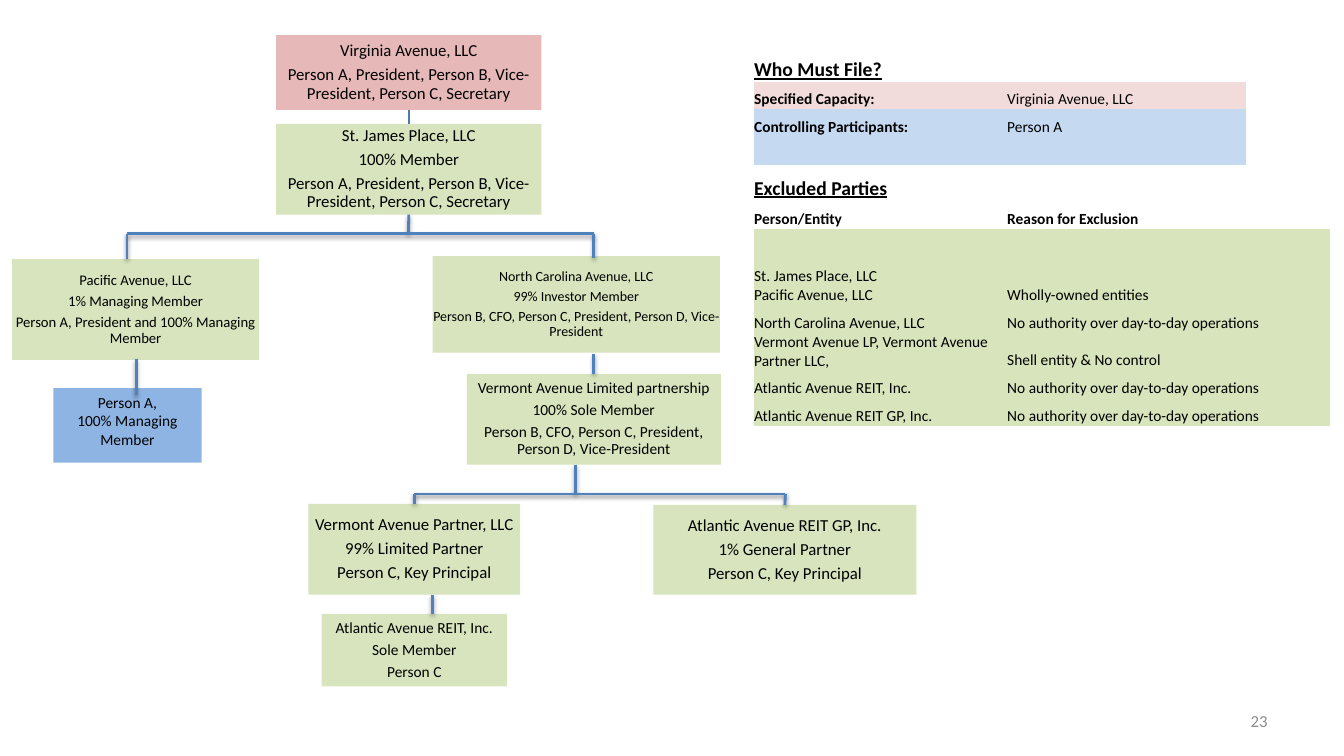
from lxml import etree
from pptx import Presentation
from pptx.dml.color import RGBColor
from pptx.enum.shapes import MSO_CONNECTOR, MSO_SHAPE
from pptx.enum.text import MSO_ANCHOR, PP_ALIGN
from pptx.oxml.ns import qn
from pptx.util import Pt

RECT, STRAIGHT = MSO_SHAPE.RECTANGLE, MSO_CONNECTOR.STRAIGHT
LEFT, CENTER, RIGHT = PP_ALIGN.LEFT, PP_ALIGN.CENTER, PP_ALIGN.RIGHT
TOP, MIDDLE, BOTTOM = MSO_ANCHOR.TOP, MSO_ANCHOR.MIDDLE, MSO_ANCHOR.BOTTOM
BOTTOM_SIDE, TOP_SIDE = 2, 0
PX = 9144  # 100 px to the inch
NO_STYLE = "{2D5ABB26-0587-4C30-8999-92F81FD0307C}"

THEME = {
    "font": "Calibri", "text": "000000", "muted": "8C8C8C",
    "capacity": "E6B9B8", "entity": "D7E4BD", "controller": "8EB4E3",
    "capacity_row": "F2DCDB", "controller_row": "C5D9F1", "excluded_row": "D8E4BC",
    "link": "4F81BD", "thin_link": "497CAB",
    "heading": 14, "large": 12, "body": 11, "small": 10.5, "tiny": 10,
}


def write(frame, lines, size, color="text", align=LEFT, bold=False,
          underline=False, spacing=None, after=0):
    """Fill a text frame, one paragraph for each line."""
    frame.word_wrap = True
    for index, line in enumerate(lines):
        paragraph = frame.paragraphs[0] if index == 0 else frame.add_paragraph()
        paragraph.alignment = align
        if spacing:
            paragraph.line_spacing = spacing
            paragraph.space_after = Pt(after)
        if not line:
            etree.SubElement(paragraph._p, qn("a:endParaRPr"), sz=str(THEME[size] * 100))
            continue
        run = paragraph.add_run()
        run.text = line
        run.font.name = THEME["font"]
        run.font.size = Pt(THEME[size])
        run.font.bold = bold
        run.font.underline = underline
        run.font.color.rgb = RGBColor.from_string(THEME[color])


def link(start, end, color="link", width=2, shadow=True):
    connector = slide.shapes.add_connector(STRAIGHT, *(v * PX for v in start + end))
    connector.line.color.rgb = RGBColor.from_string(THEME[color])
    connector.line.width = Pt(width)
    effects = etree.SubElement(connector._element.spPr, qn("a:effectLst"))
    if shadow:
        outer = etree.SubElement(effects, qn("a:outerShdw"), blurRad=str(Pt(3.1)),
                                 dist=str(Pt(1.6)), dir="5400000", rotWithShape="0")
        black = etree.SubElement(outer, qn("a:srgbClr"), val="000000")
        etree.SubElement(black, qn("a:alpha"), val="38000")
    return connector


prs = Presentation()
prs.slide_width, prs.slide_height = 1333 * PX, 750 * PX
slide = prs.slides.add_slide(prs.slide_layouts[6])

page_number = slide.shapes.add_textbox(956 * PX, 695 * PX, 311 * PX, 40 * PX)
page_number.text_frame.vertical_anchor = MIDDLE
write(page_number.text_frame, ["23"], "large", color="muted", align=RIGHT)

# Ownership chart
officers = "Person A, President, Person B, Vice-President, Person C, Secretary"
investors = "Person B, CFO, Person C, President, Person D, Vice-President"
principal = "Person C, Key Principal"
entities = {
    "virginia": ((274, 35, 263, 74), "capacity", "large",
                 ["Virginia Avenue, LLC", officers]),
    "st_james": ((274, 123, 263, 90), "entity", "large",
                 ["St. James Place, LLC", "100% Member", officers]),
    "pacific": ((12, 257, 245, 100), "entity", "small",
                ["Pacific Avenue, LLC", "1% Managing Member",
                 "Person A, President and 100% Managing Member"]),
    "carolina": ((429, 254, 285, 96), "entity", "tiny",
                 ["North Carolina Avenue, LLC", "99% Investor Member", investors]),
    "vermont": ((463, 371, 252, 90), "entity", "body",
                ["Vermont Avenue Limited partnership", "100% Sole Member", investors]),
    "partner": ((306, 500, 210, 90), "entity", "large",
                ["Vermont Avenue Partner, LLC", "99% Limited Partner", principal]),
    "reit": ((319, 609, 184, 72), "entity", "body",
             ["Atlantic Avenue REIT, Inc.", "Sole Member", "Person C"]),
    "reit_gp": ((648, 501, 261, 89), "entity", "large",
                ["Atlantic Avenue REIT GP, Inc.", "1% General Partner", principal]),
    "person_a": ((53, 385, 147, 74), "controller", "body",
                 ["Person A,", "100% Managing Member"]),
}
boxes = {}
for key, (place, fill, size, lines) in entities.items():
    box = boxes[key] = slide.shapes.add_shape(RECT, *(v * PX for v in place))
    box.shadow.inherit = False
    box.fill.solid()
    box.fill.fore_color.rgb = RGBColor.from_string(THEME[fill])
    box.line.fill.background()
    frame = box.text_frame
    if key == "person_a":
        frame.vertical_anchor = TOP
        write(frame, lines, size, align=CENTER)
    else:
        frame.vertical_anchor = MIDDLE
        frame.margin_left = frame.margin_right = frame.margin_top = frame.margin_bottom = 0
        write(frame, lines, size, align=CENTER, spacing=0.9, after=0.35 * THEME[size])

ownership = link((405, 109), (405, 123), color="thin_link", width=1, shadow=False)
ownership.begin_connect(boxes["virginia"], BOTTOM_SIDE)
ownership.end_connect(boxes["st_james"], TOP_SIDE)

# Start, end, box joined at the start, box joined at the end
branches = [
    ((405, 213), (405, 232), "st_james", None),
    ((126, 232), (589, 232), None, None),
    ((589, 232), (589, 256), None, None),
    ((126, 232), (126, 257), None, None),
    ((135, 356), (135, 392), None, None),
    ((589, 351), (589, 371), None, "vermont"),
    ((571, 461), (571, 490), None, None),
    ((411, 490), (779, 490), None, None),
    ((411, 490), (411, 500), None, "partner"),
    ((779, 490), (779, 501), None, "reit_gp"),
    ((429, 590), (429, 609), None, None),
]
for start, end, owner, owned in branches:
    branch = link(start, end)
    if owner:
        branch.begin_connect(boxes[owner], BOTTOM_SIDE)
    if owned:
        branch.end_connect(boxes[owned], TOP_SIDE)

# Filing table: height, first column, second column, fill, filled columns, merged columns, format
heading = {"size": "heading", "bold": True, "underline": True}
label = {"size": "body", "bold": True}
plain = {"size": "body"}
no_authority = "No authority over day-to-day operations"
excluded = [
    (75, ["St. James Place, LLC", "Pacific Avenue, LLC"], "Wholly-owned entities"),
    (28, ["North Carolina Avenue, LLC"], no_authority),
    (28, ["Vermont Avenue LP, Vermont Avenue Partner LLC,"], "Shell entity & No control"),
    (28, ["Atlantic Avenue REIT, Inc."], no_authority),
    (28, ["Atlantic Avenue REIT GP, Inc."], no_authority),
]
filing_rows = [
    (35, ["Who Must File?"], "", None, 0, 1, heading, plain),
    (27, ["Specified Capacity:"], "Virginia Avenue, LLC", "capacity_row", 4, 3, label, plain),
    (28, ["Controlling Participants:"], "Person A", "controller_row", 4, 1, label, plain),
    (28, [""], "", "controller_row", 4, 1, plain, plain),
    (35, ["Excluded Parties"], "", None, 0, 1, heading, plain),
    (28, ["Person/Entity"], "Reason for Exclusion", None, 0, 3, label, label),
] + [(height, names, reason, "excluded_row", 5, 4, plain, plain)
     for height, names, reason in excluded]
column_widths = [251, 79, 79, 79, 83]

table_frame = slide.shapes.add_table(
    len(filing_rows), len(column_widths), 748 * PX, 46 * PX,
    sum(column_widths) * PX, sum(row[0] for row in filing_rows) * PX)
filing = table_frame.table
filing.first_row = filing.horz_banding = False
filing._tbl.tblPr.find(qn("a:tableStyleId")).text = NO_STYLE
for column, width in zip(filing.columns, column_widths):
    column.width = width * PX

for r, (height, names, reason, fill, filled, span, name_format, reason_format) in enumerate(filing_rows):
    filing.rows[r].height = height * PX
    if span > 1:
        filing.cell(r, 1).merge(filing.cell(r, span))
    contents = [(names, name_format), ([reason], reason_format)] + [([""], plain)] * 3
    for c, (lines, text_format) in enumerate(contents):
        cell = filing.cell(r, c)
        cell.margin_left = cell.margin_right = cell.margin_top = cell.margin_bottom = 0
        cell.vertical_anchor = BOTTOM
        if c < filled:
            cell.fill.solid()
            cell.fill.fore_color.rgb = RGBColor.from_string(THEME[fill])
        else:
            cell.fill.background()
        write(cell.text_frame, lines, **text_format)

prs.save("out.pptx")
